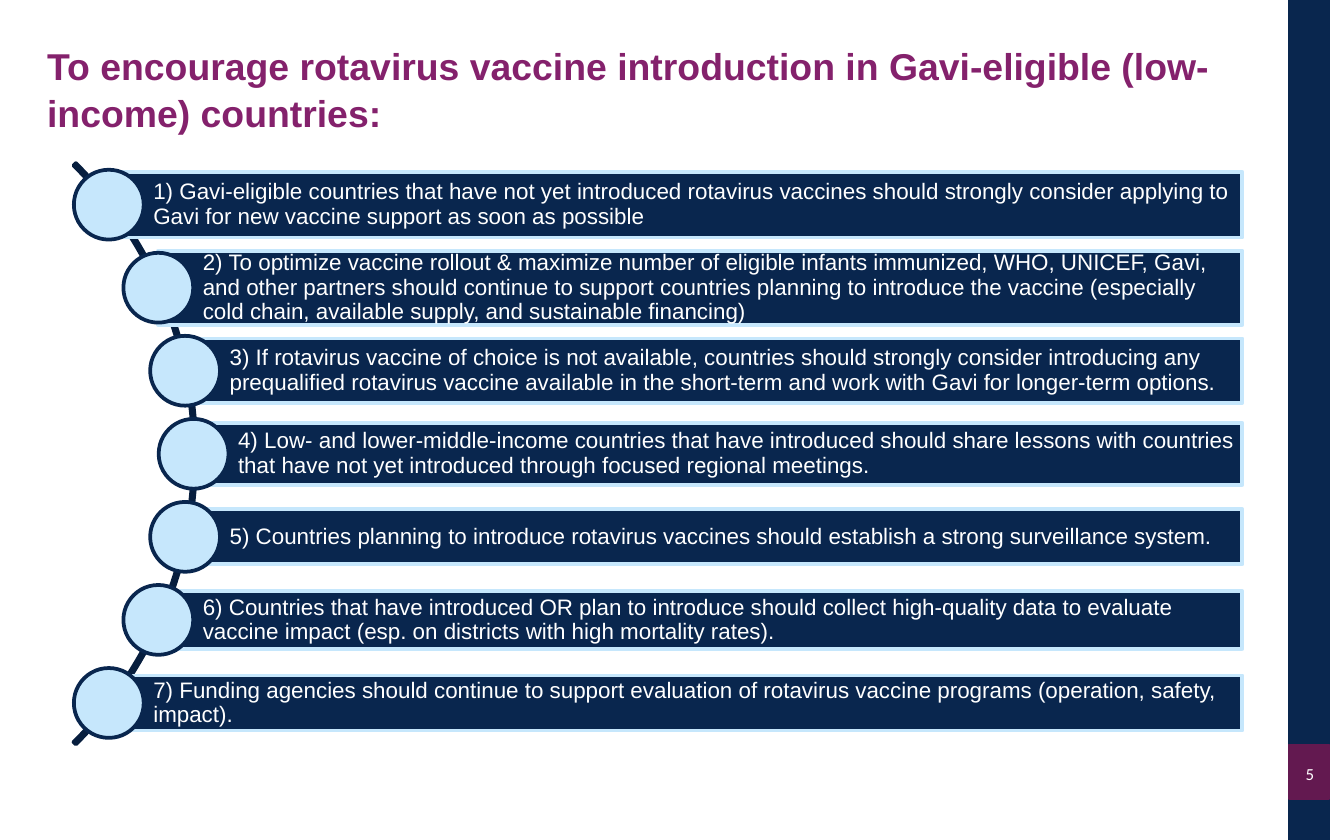
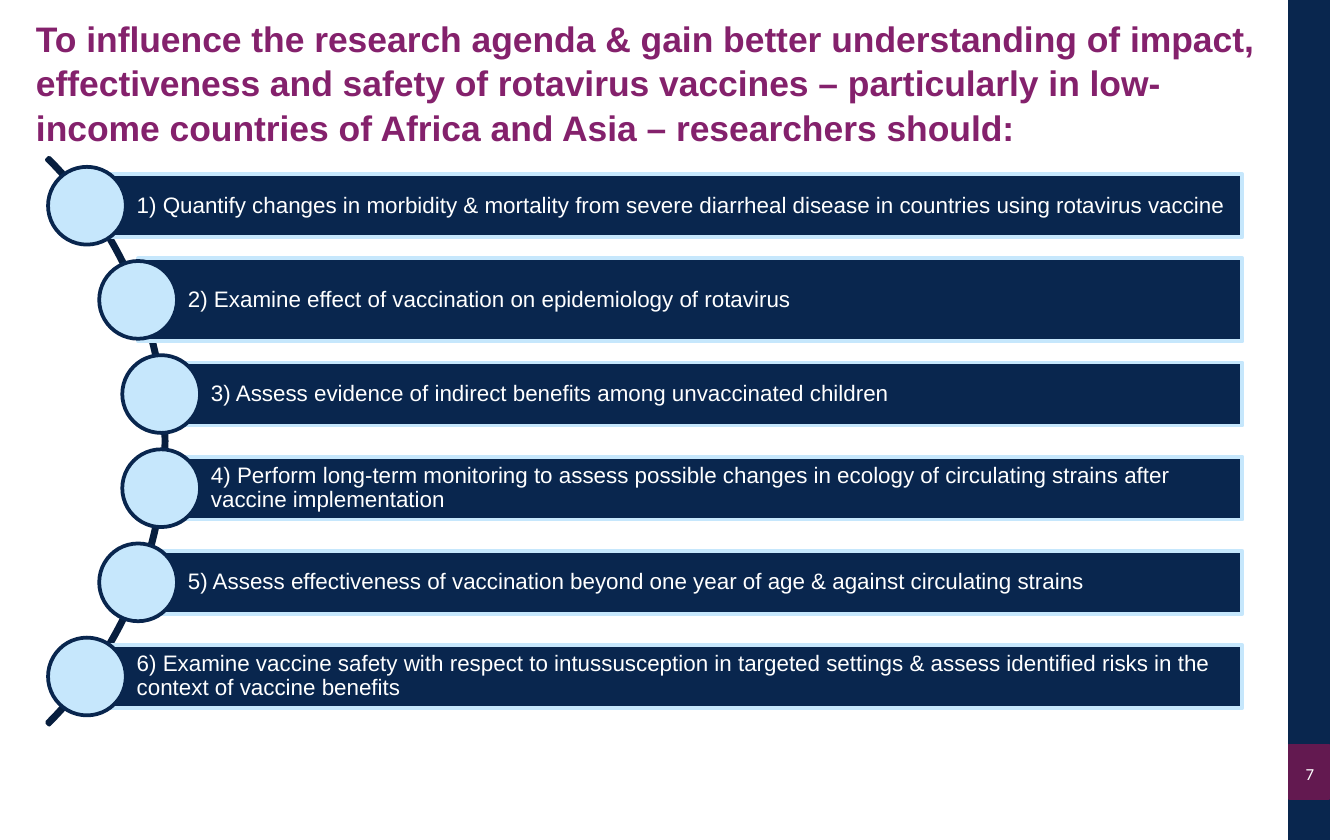
from dataclasses import dataclass
from math import sqrt
from typing import Optional

from pptx import Presentation
from pptx.dml.color import RGBColor
from pptx.enum.shapes import MSO_SHAPE
from pptx.enum.text import MSO_ANCHOR, MSO_AUTO_SIZE, PP_ALIGN
from pptx.presentation import Presentation as Deck
from pptx.shapes.autoshape import Shape
from pptx.slide import Slide
from pptx.text.text import TextFrame
from pptx.util import Cm, Pt

NAVY = RGBColor(0x09, 0x26, 0x4E)
DARK_NAVY = RGBColor(0x07, 0x1E, 0x3E)
PALE_BLUE = RGBColor(0xC6, 0xE7, 0xFC)
PLUM = RGBColor(0x63, 0x19, 0x50)
MAGENTA = RGBColor(0x84, 0x21, 0x6C)
WHITE = RGBColor(0xFF, 0xFF, 0xFF)

SLIDE_W, SLIDE_H = 25.4, 15.88
BAND_X, BAND_W = 24.36, 0.76
BAR_RIGHT = 23.48
TRACK_INSET = 0.05


@dataclass(frozen=True)
class Box:
    x: float
    y: float
    w: float
    h: float


@dataclass(frozen=True)
class Item:
    text: str
    height: float = 1.19


@dataclass(frozen=True)
class Curve:
    cx: float
    cy: float
    radius: float
    pitch: float
    dot: float
    indent: float


@dataclass(frozen=True)
class Page:
    number: str
    title: str
    title_box: Box
    title_size: int
    curve: Curve
    items: tuple[Item, ...]


PAGES = (
    Page(
        "5",
        "To encourage rotavirus vaccine introduction in Gavi-eligible (low-income) countries:",
        Box(0.69, 0.64, 23.34, 2.03),
        20,
        Curve(-4.06, 8.58, 7.77, 1.57, 1.32, 0.84),
        (
            Item("1) Gavi-eligible countries that have not yet introduced rotavirus vaccines "
                 "should strongly consider applying to Gavi for new vaccine support as soon "
                 "as possible", 1.24),
            Item("2) To optimize vaccine rollout & maximize number of eligible infants "
                 "immunized, WHO, UNICEF, Gavi, and other partners should continue to support "
                 "countries planning to introduce the vaccine (especially cold chain, "
                 "available supply, and sustainable financing)", 1.4),
            Item("3) If rotavirus vaccine of choice is not available, countries should "
                 "strongly consider introducing any prequalified rotavirus vaccine available "
                 "in the short-term and work with Gavi for longer-term options.", 1.22),
            Item("4) Low- and lower-middle-income countries that have introduced should share "
                 "lessons with countries that have not yet introduced through focused "
                 "regional meetings.", 1.17),
            Item("5) Countries planning to introduce rotavirus vaccines should establish a "
                 "strong surveillance system.", 1.04),
            Item("6) Countries that have introduced OR plan to introduce should collect "
                 "high-quality data to evaluate vaccine impact (esp. on districts with high "
                 "mortality rates).", 1.09),
            Item("7) Funding agencies should continue to support evaluation of rotavirus "
                 "vaccine programs (operation, safety, impact).", 1.04),
        ),
    ),
    Page(
        "7",
        "To influence the research agenda & gain better understanding of impact, "
        "effectiveness and safety of rotavirus vaccines – particularly in low-income "
        "countries of Africa and Asia – researchers should:",
        Box(0.48, 0.36, 23.67, 2.36),
        19,
        Curve(-4.43, 8.34, 7.58, 1.78, 1.47, 0.94),
        (
            Item("1) Quantify changes in morbidity & mortality from severe diarrheal disease "
                 "in countries using rotavirus vaccine"),
            Item("2) Examine effect of vaccination on epidemiology of rotavirus", 1.57),
            Item("3) Assess evidence of indirect benefits among unvaccinated children"),
            Item("4) Perform long-term monitoring to assess possible changes in ecology of "
                 "circulating strains after vaccine implementation"),
            Item("5) Assess effectiveness of vaccination beyond one year of age & against "
                 "circulating strains"),
            Item("6) Examine vaccine safety with respect to intussusception in targeted "
                 "settings & assess identified risks in the context of vaccine benefits"),
        ),
    ),
)


def add_shape(slide: Slide, kind: MSO_SHAPE, box: Box, fill: Optional[RGBColor],
              line: RGBColor, width: float = 2) -> Shape:
    sp = slide.shapes.add_shape(kind, Cm(box.x), Cm(box.y), Cm(box.w), Cm(box.h))
    sp.shadow.inherit = False
    if fill is None:
        sp.fill.background()
    else:
        sp.fill.solid()
        sp.fill.fore_color.rgb = fill
    sp.line.color.rgb = line
    sp.line.width = Pt(width)
    return sp


def write(tf: TextFrame, text: str, size: int, color: RGBColor,
          insets: tuple[float, float, float, float], font: str = "Arial",
          bold: bool = False, align: PP_ALIGN = PP_ALIGN.LEFT, spacing: float = 1) -> None:
    tf.word_wrap = True
    tf.auto_size = MSO_AUTO_SIZE.NONE
    tf.vertical_anchor = MSO_ANCHOR.MIDDLE
    tf.margin_left, tf.margin_top, tf.margin_right, tf.margin_bottom = map(Cm, insets)
    p = tf.paragraphs[0]
    p.alignment = align
    p.line_spacing = spacing
    r = p.add_run()
    r.text = text
    r.font.name = font
    r.font.size = Pt(size)
    r.font.bold = bold
    r.font.color.rgb = color


def add_band(slide: Slide, number: str) -> None:
    add_shape(slide, MSO_SHAPE.RECTANGLE, Box(BAND_X, 0, BAND_W, SLIDE_H), NAVY, NAVY, 0.75)
    add_shape(slide, MSO_SHAPE.RECTANGLE, Box(BAND_X, 14.07, BAND_W, 1.04), PLUM, PLUM, 0.75)
    label = slide.shapes.add_textbox(Cm(BAND_X), Cm(14.2), Cm(0.79), Cm(0.84))
    write(label.text_frame, number, 9, WHITE, (0.2, 0.1, 0.2, 0.1), "Calibri",
          align=PP_ALIGN.CENTER)


def add_title(slide: Slide, page: Page) -> None:
    title, box = slide.shapes.title, page.title_box
    title.left, title.top = Cm(box.x), Cm(box.y)
    title.width, title.height = Cm(box.w), Cm(box.h)
    write(title.text_frame, page.title, page.title_size, MAGENTA, (0.2, 0.1, 0.2, 0.1),
          bold=True, spacing=1.05)


def add_curved_list(slide: Slide, curve: Curve, items: tuple[Item, ...]) -> None:
    size = 2 * curve.radius
    arc = add_shape(slide, MSO_SHAPE.BLOCK_ARC,
                    Box(curve.cx - curve.radius, curve.cy - curve.radius, size, size),
                    None, DARK_NAVY)
    for i, value in enumerate((189, 27, 0.004)):
        arc.adjustments[i] = value

    for i, item in enumerate(items):
        offset = (i - (len(items) - 1) / 2) * curve.pitch
        x = curve.cx + sqrt((curve.radius - TRACK_INSET) ** 2 - offset ** 2)
        y = curve.cy + offset
        bar = add_shape(slide, MSO_SHAPE.RECTANGLE,
                        Box(x, y - item.height / 2, BAR_RIGHT - x, item.height),
                        NAVY, PALE_BLUE)
        write(bar.text_frame, item.text, 12, WHITE, (curve.indent, 0.08, 0.08, 0.08),
              spacing=0.9)
        add_shape(slide, MSO_SHAPE.OVAL,
                  Box(x - curve.dot / 2, y - curve.dot / 2, curve.dot, curve.dot),
                  PALE_BLUE, NAVY)


def add_page(prs: Deck, page: Page) -> None:
    slide = prs.slides.add_slide(prs.slide_layouts[5])
    add_band(slide, page.number)
    add_title(slide, page)
    add_curved_list(slide, page.curve, page.items)


def main() -> None:
    prs = Presentation()
    prs.slide_width, prs.slide_height = Cm(SLIDE_W), Cm(SLIDE_H)
    for page in PAGES:
        add_page(prs, page)
    prs.save("out.pptx")


if __name__ == "__main__":
    main()
